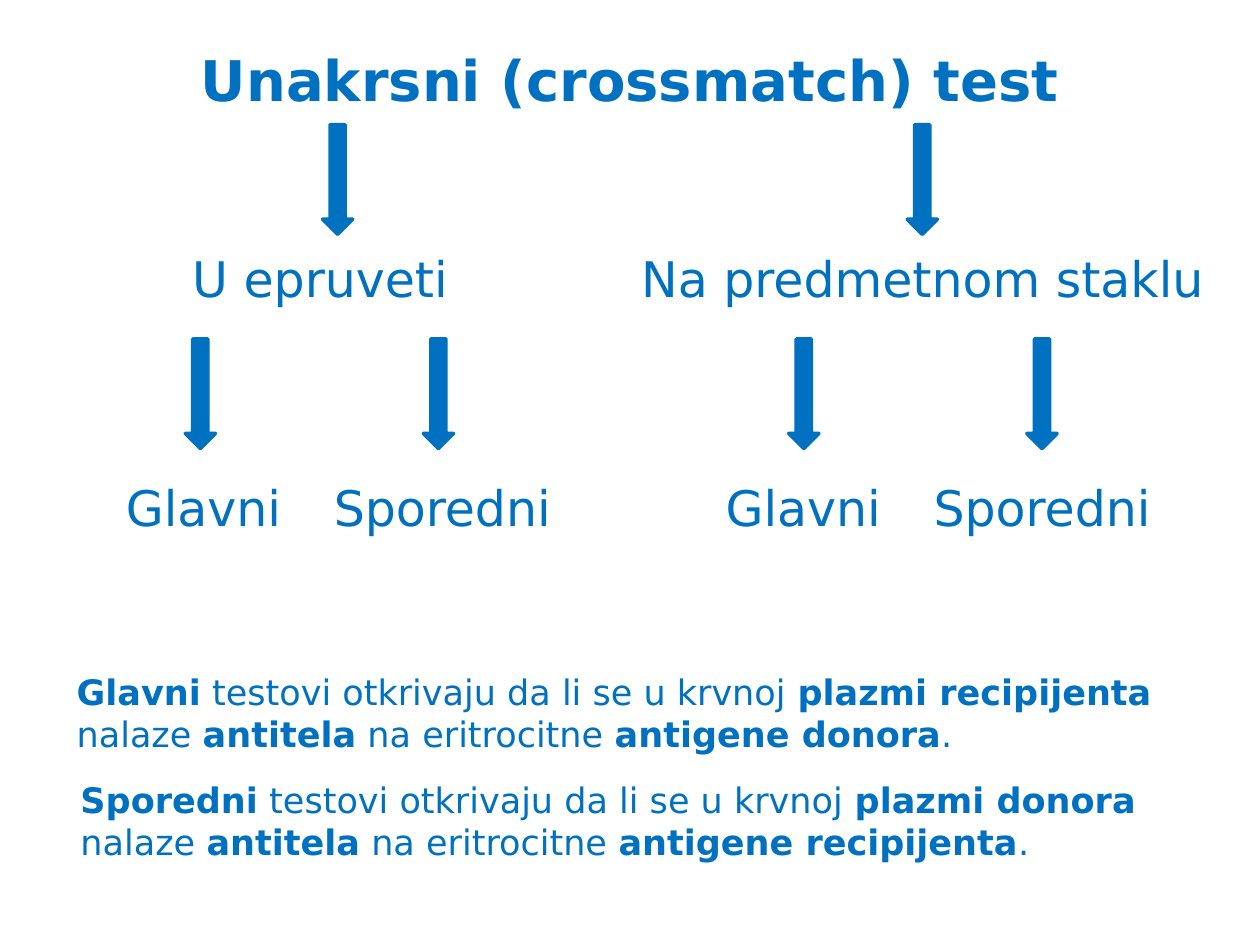
from pptx import Presentation
from pptx.dml.color import RGBColor
from pptx.enum import shapes, text
from pptx.util import Inches, Pt

BLUE = "0070C0"


def add_text(left, top, width, height, parts, size, align):
    """Add a text box; parts are (wording, bold) pairs in one paragraph."""
    box = slide.shapes.add_textbox(Inches(left), Inches(top), Inches(width), Inches(height))
    frame = box.text_frame
    frame.word_wrap = True
    frame.margin_top = Inches(0.07)
    para = frame.paragraphs[0]
    para.alignment = align
    para.font.name = "DejaVu Sans"
    para.font.size = Pt(size)
    para.font.color.rgb = RGBColor.from_string(BLUE)
    for wording, bold in parts:
        span = para.add_run()
        span.text = wording
        span.font.bold = bold


def add_arrow(left, top):
    arrow = slide.shapes.add_shape(
        shapes.MSO_SHAPE.DOWN_ARROW, Inches(left), Inches(top), Inches(0.24), Inches(0.87))
    arrow.shadow.inherit = False
    arrow.fill.solid()
    arrow.fill.fore_color.rgb = RGBColor.from_string(BLUE)
    arrow.line.color.rgb = RGBColor.from_string(BLUE)
    arrow.line.width = Pt(2)


deck = Presentation()
deck.slide_width, deck.slide_height = Inches(10), Inches(7.5)
slide = deck.slides.add_slide(deck.slide_layouts[6])
CENTER, LEFT = text.PP_ALIGN.CENTER, text.PP_ALIGN.LEFT

add_text(0, 0.29, 10, 0.71, [("Unakrsni (crossmatch) test", True)], 32, CENTER)

# Each method: name, name left and width, arrow from title, first test arrow, first test label
methods = [
    ("U epruveti", 1.16, 2.76, 2.56, 1.47, 0.76),
    ("Na predmetnom staklu", 4.94, 4.76, 7.2, 6.26, 5.52),
]
for name, name_left, name_width, title_arrow, test_arrow, test_left in methods:
    add_arrow(title_arrow, 0.99)
    add_text(name_left, 1.9, name_width, 0.71, [(name, False)], 28, CENTER)
    for arrow_left in (test_arrow, test_arrow + 1.89):
        add_arrow(arrow_left, 2.69)
    add_text(test_left, 3.72, 1.71, 0.63, [("Glavni", False)], 28, CENTER)
    add_text(test_left + 1.67, 3.72, 2.16, 0.63, [("Sporedni", False)], 28, CENTER)

explanations = [
    (0.51, 5.25, "Glavni", "plazmi recipijenta", "antigene donora"),
    (0.54, 6.11, "Sporedni", "plazmi donora", "antigene recipijenta"),
]
for left, top, test, plasma, antigens in explanations:
    parts = [
        (test, True),
        (" testovi otkrivaju da li se u krvnoj ", False),
        (plasma, True),
        (" nalaze ", False),
        ("antitela", True),
        (" na eritrocitne ", False),
        (antigens, True),
        (".", False),
    ]
    add_text(left, top, 9.35, 0.63, parts, 20, LEFT)

deck.save("out.pptx")
